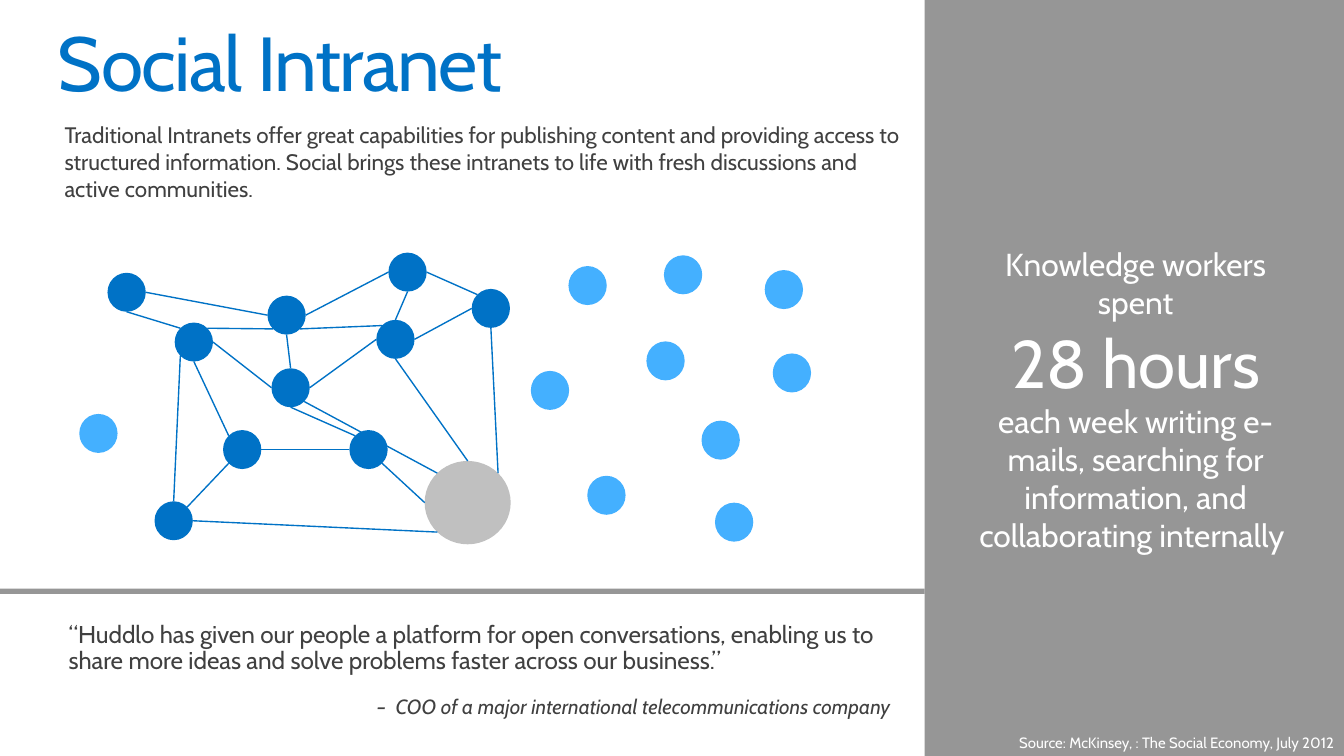
from dataclasses import dataclass
from math import sqrt

from lxml.etree import SubElement
from pptx import Presentation
from pptx.dml.color import RGBColor
from pptx.enum.shapes import MSO_CONNECTOR, MSO_SHAPE
from pptx.enum.text import MSO_ANCHOR, PP_ALIGN
from pptx.oxml.ns import qn
from pptx.util import Inches, Pt


@dataclass(frozen=True)
class Theme:
    """Colours, type sizes and line width of the slide."""

    font: str = "Cabin"
    blue: str = "0072C6"
    sky: str = "44B0FF"
    silver: str = "C0C0C0"
    gray: str = "969696"
    ink: str = "404040"
    white: str = "FFFFFF"
    title: float = 41
    figure: float = 36
    statement: float = 17
    quote: float = 13
    body: float = 12
    byline: float = 11
    source: float = 8
    link: float = 0.75


THEME = Theme()
COLUMNS, ROWS = 100, 56.25
PANEL_LEFT = 68.8
DOT = (2.85, 2.9)
HUB = (6.4, 6.2)

MEMBERS = {
    "a": (8, 20.3), "b": (13, 24), "c": (19.9, 22), "d": (20.2, 27.4),
    "e": (28, 23.8), "f": (28.9, 18.8), "g": (35.1, 21.5), "h": (16.6, 32),
    "i": (26, 32), "j": (11.5, 37.3),
}
OUTSIDERS = [
    (42.3, 19.8), (52.2, 31.3), (56.9, 20.1), (57.5, 26.3), (5.9, 30.8),
    (43.7, 35.4), (53.2, 37.4), (39.5, 27.6), (48.1, 25.4), (49.4, 19),
]
HUB_CORNER = (31.6, 34.3)
LINKS = """
    a.s-b.nw   a.e-c.w    c.e-f.w     f.e-g.nw    g.w-e.e   e.n-f.s    d.n-c.s
    b.ne-c.sw  c.se-e.nw  e.w-d.e     b.e-d.w     g.s-hub.ne  i.se-hub.w
    hub.n-e.s  hub.nw-d.se  i.nw-d.s  h.nw-b.s    j.n-b.sw  h.e-i.w
    hub.sw-j.e  j.ne-h.sw
""".split()


def write(paragraph, text, *, size, color, align=PP_ALIGN.LEFT, italic=False,
          spacing=1.0, before=0, indent=0, tracking=0, line_after=False):
    """Add formatted text to a paragraph."""
    if indent:
        properties = paragraph._p.get_or_add_pPr()
        properties.set("marL", str(Inches(indent)))
        properties.set("indent", "0")
    paragraph.alignment = align
    paragraph.line_spacing = spacing
    paragraph.space_before = Pt(before)
    run = paragraph.add_run()
    run.text = text
    run.font.name = THEME.font
    run.font.size = Pt(size)
    run.font.italic = italic
    run.font.color.rgb = RGBColor.from_string(color)
    if tracking:
        run._r.get_or_add_rPr().set("spc", str(round(tracking * 100)))
    if line_after:
        paragraph.add_line_break()
        SubElement(paragraph._p[-1], qn("a:rPr"), sz=str(size * 100))


class SlideBuilder:
    """Draws themed elements on one slide, measured in grid columns and rows."""

    def __init__(self, deck):
        """Add a blank slide to the deck."""
        self.theme = THEME
        self.column = deck.slide_width / COLUMNS
        self.row = deck.slide_height / ROWS
        self.slide = deck.slides.add_slide(deck.slide_layouts[6])

    def scale(self, *grid):
        """Turn alternating columns and rows into slide lengths."""
        return [round(v * (self.row if n % 2 else self.column))
                for n, v in enumerate(grid)]

    def block(self, area, color, kind=MSO_SHAPE.RECTANGLE):
        """Add a filled shape without outline."""
        shape = self.slide.shapes.add_shape(kind, *self.scale(*area))
        shape.shadow.inherit = False
        shape.fill.solid()
        shape.fill.fore_color.rgb = RGBColor.from_string(color)
        shape.line.fill.background()
        return shape

    def dot(self, corner, color, size=DOT):
        """Add one person or hub of the network."""
        return self.block((*corner, *size), color, MSO_SHAPE.OVAL)

    def link(self, start, end):
        """Add a thin line between two points."""
        connector = self.slide.shapes.add_connector(
            MSO_CONNECTOR.STRAIGHT, *self.scale(*start, *end))
        connector.line.color.rgb = RGBColor.from_string(self.theme.blue)
        connector.line.width = Pt(self.theme.link)
        SubElement(connector._element.spPr, qn("a:effectLst"))

    def fill_text(self, shape, paragraphs, inset=(0, 0), anchor=MSO_ANCHOR.TOP):
        """Fill a shape with paragraphs, each a list of text and format pairs."""
        frame = shape.text_frame
        frame.word_wrap = True
        frame.vertical_anchor = anchor
        frame.margin_left = frame.margin_right = Inches(inset[0])
        frame.margin_top = frame.margin_bottom = Inches(inset[1])
        for n, pieces in enumerate(paragraphs):
            paragraph = frame.add_paragraph() if n else frame.paragraphs[0]
            for text, style in pieces:
                write(paragraph, text, **style)

    def text(self, area, paragraphs, **layout):
        """Add a text box."""
        box = self.slide.shapes.add_textbox(*self.scale(*area))
        self.fill_text(box, paragraphs, **layout)


def rim_point(corner, size, direction):
    """Find the point on an ellipse's rim in a compass direction."""
    across = ("e" in direction) - ("w" in direction)
    down = ("s" in direction) - ("n" in direction)
    reach = 2 * sqrt(across ** 2 + down ** 2)
    return (corner[0] + size[0] * (0.5 + across / reach),
            corner[1] + size[1] * (0.5 + down / reach))


def draw_network(builder):
    """Draw the linked members, the hub and the unlinked outsiders."""
    for corner in MEMBERS.values():
        builder.dot(corner, THEME.blue)
    for corner in OUTSIDERS:
        builder.dot(corner, THEME.sky)
    builder.dot(HUB_CORNER, THEME.silver, HUB)
    nodes = {name: (corner, DOT) for name, corner in MEMBERS.items()}
    nodes["hub"] = (HUB_CORNER, HUB)
    for link in LINKS:
        ends = [end.split(".") for end in link.split("-")]
        builder.link(*(rim_point(*nodes[name], side) for name, side in ends))


def draw_panel(builder):
    """Draw the gray side panel with its key figure and source."""
    builder.block((PANEL_LEFT, 0, 31.3, 56.4), THEME.gray)
    builder.text((73.9, 51.4, 26.1, 4.9), [
        [("Source: McKinsey, : The Social Economy, July 2012",
          dict(size=THEME.source, color=THEME.white, align=PP_ALIGN.RIGHT))],
    ], inset=(0.07, 0.04), anchor=MSO_ANCHOR.BOTTOM)
    statement = dict(size=THEME.statement, color=THEME.white, align=PP_ALIGN.CENTER)
    builder.text((71.3, 17.8, 26.4, 24.2), [
        [("Knowledge workers spent", statement | dict(line_after=True)),
         ("28 hours", statement | dict(size=THEME.figure))],
        [("each week writing e-mails, searching for information, and "
          "collaborating internally ", statement)],
    ], inset=(0.07, 0.04))


def draw_quote(builder):
    """Draw the customer quote below its dividing rule."""
    quote = dict(size=THEME.quote, color=THEME.ink, spacing=0.9, indent=0.24)
    area = builder.block((0.5, 43.5, 68, 12.8), THEME.white)
    builder.fill_text(area, [
        [("“Huddlo has given our people a platform for open conversations, enabling "
          "us to share more ideas and solve problems faster across our business.”", quote)],
        [("–  COO of a major international telecommunications company",
          quote | dict(size=THEME.byline, italic=True, align=PP_ALIGN.RIGHT, before=12))],
    ], inset=(0.22, 0.04), anchor=MSO_ANCHOR.MIDDLE)
    builder.block((0, 43.8, PANEL_LEFT, 0.4), THEME.gray)


def main():
    """Build and save the slide."""
    deck = Presentation()
    deck.slide_width, deck.slide_height = Inches(10), Inches(10) * 9 // 16
    builder = SlideBuilder(deck)
    builder.text((4.3, 1.9, 91.5, 6.1), [
        [("Social Intranet",
          dict(size=THEME.title, color=THEME.blue, spacing=0.9, tracking=-0.8))],
    ])
    draw_network(builder)
    draw_panel(builder)
    draw_quote(builder)
    builder.text((4.8, 9, 63.1, 10.1), [
        [("Traditional Intranets offer great capabilities for publishing content and "
          "providing access to structured information. Social brings these intranets to "
          "life with fresh discussions and active communities.",
          dict(size=THEME.body, color=THEME.ink))],
    ])
    deck.save("out.pptx")


if __name__ == "__main__":
    main()
